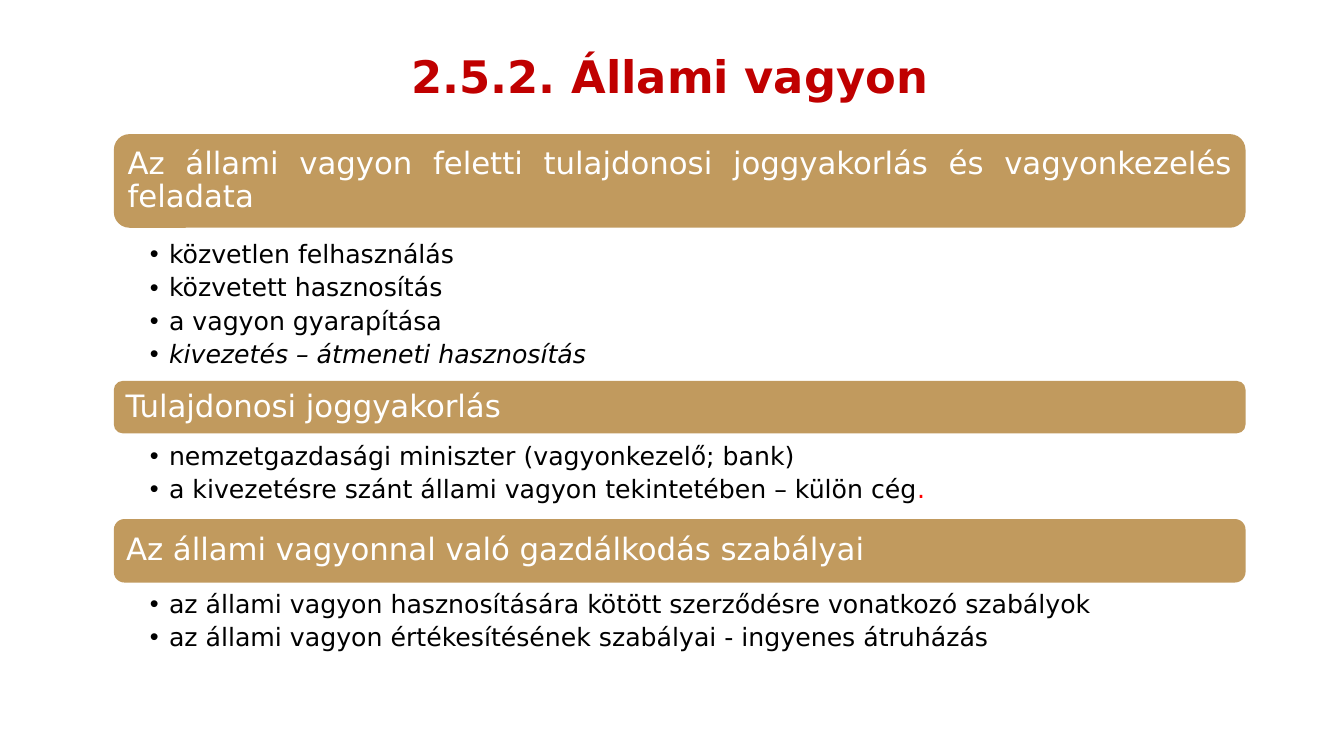
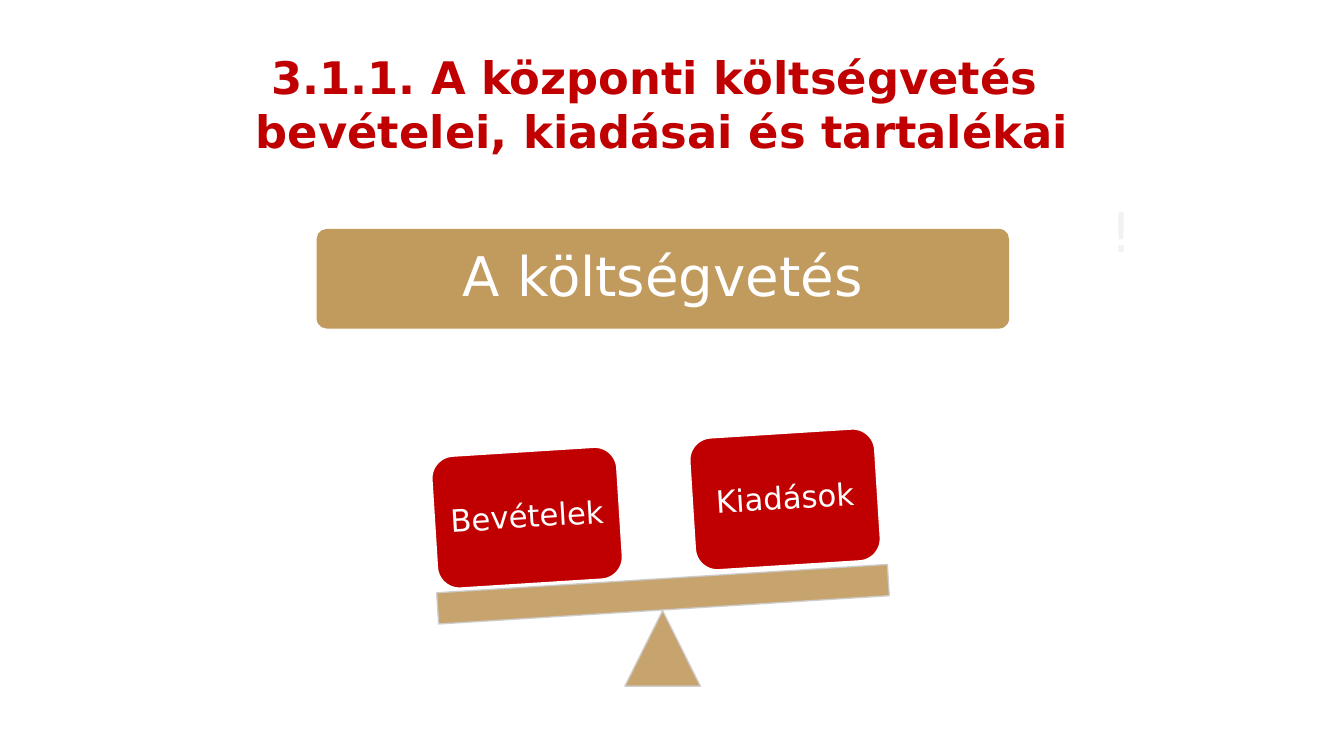
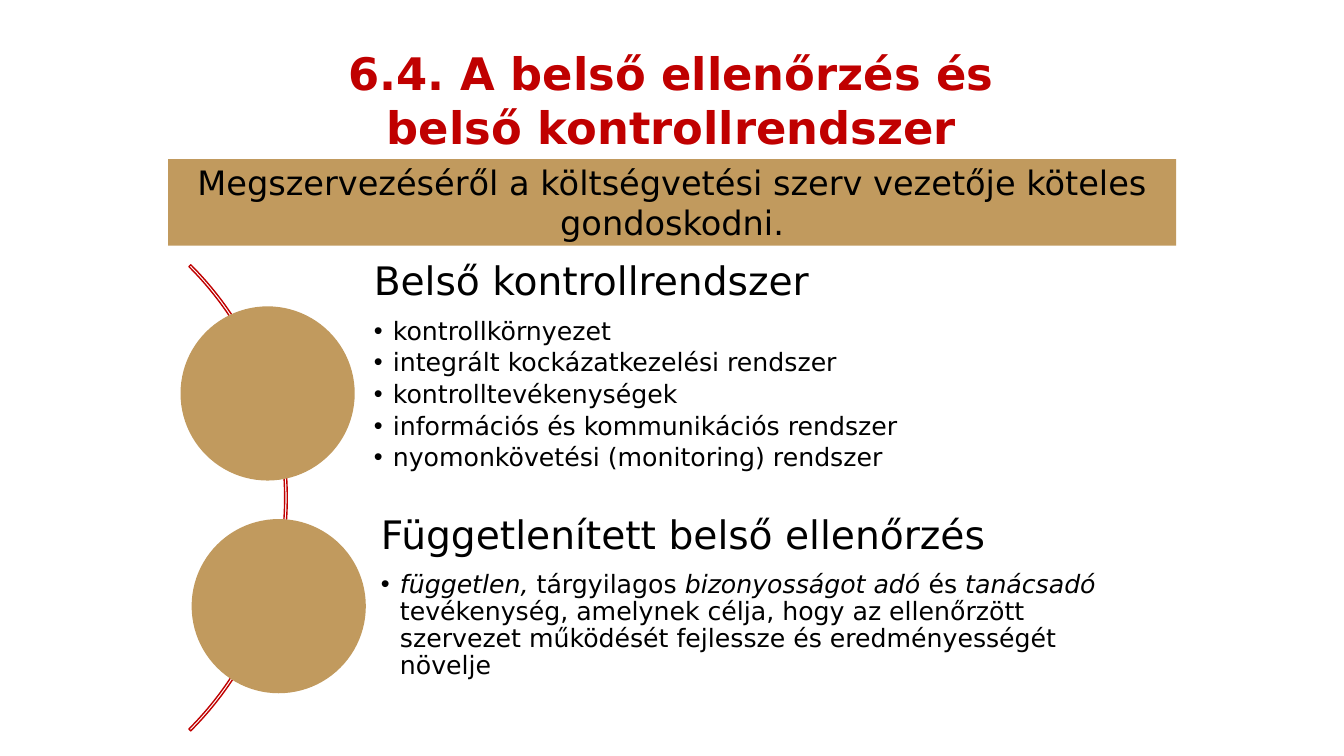
import pptx
import pptx.util
import pptx.dml.color
import pptx.enum.shapes
import pptx.enum.text
import pptx.oxml
import pptx.oxml.ns

Cm, Pt = pptx.util.Cm, pptx.util.Pt
RGBColor = pptx.dml.color.RGBColor
MSO_SHAPE = pptx.enum.shapes.MSO_SHAPE
PP_ALIGN = pptx.enum.text.PP_ALIGN
MSO_ANCHOR = pptx.enum.text.MSO_ANCHOR
MSO_AUTO_SIZE = pptx.enum.text.MSO_AUTO_SIZE

# Colours
RED = RGBColor(0xC0, 0x00, 0x00)
BRIGHT_RED = RGBColor(0xFF, 0x00, 0x00)
GOLD = RGBColor(0xC1, 0x9A, 0x5E)
GREY = RGBColor(0xCC, 0xCC, 0xCC)
PALE = RGBColor(0xF2, 0xF2, 0xF2)
WHITE = RGBColor(0xFF, 0xFF, 0xFF)
BLACK = RGBColor(0x00, 0x00, 0x00)

# Text styles: paragraph values, font values, colour and, for lists, the bullet
FONT = "DejaVu Sans"
CENTER = {"alignment": PP_ALIGN.CENTER, "line_spacing": 0.9}
LEFT = {"alignment": PP_ALIGN.LEFT, "line_spacing": 0.9, "space_before": Pt(0)}
TITLE = {"p": {"alignment": PP_ALIGN.CENTER}, "font": {"size": Pt(32), "bold": True}, "color": RED}
BAR = {"p": LEFT, "font": {"size": Pt(22)}, "color": WHITE}
BOX = {**BAR, "p": CENTER}
BIG = {"p": CENTER, "font": {"size": Pt(39)}, "color": WHITE}
ITEM = {"p": {**LEFT, "level": 1, "space_after": Pt(4.2)},
        "font": {"size": Pt(18), "bold": False}, "color": BLACK, "bullet": "•"}
POINT = {**ITEM, "p": {**ITEM["p"], "space_after": Pt(3.2)}}
HEADING = {"p": {**LEFT, "space_after": Pt(10)}, "font": {"size": Pt(28)}, "color": BLACK, "bullet": ""}

# Text margins in cm: left, top, right, bottom
INSET = (0.25, 0.13, 0.25, 0.13)
EVEN = (0.23,) * 4
WIDE = (0.41,) * 4
LIST = (0.91, 0.08, 0.36, 0.08)
BESIDE = (2.79, 0.2, 0.2, 0.2)


def add_shape(s, kind, box, fill=None, line=None, alpha=None, rot=0):
    sp = s.shapes.add_shape(kind, *map(Cm, box))
    sp.shadow.inherit = False
    sp.rotation = rot
    for part, color in ((sp.fill, fill), (sp.line.fill, line)):
        if color is None:
            part.background()
        else:
            part.solid()
            part.fore_color.rgb = color
    if line is not None:
        sp.line.width = Pt(1)
    if alpha:
        for clr in sp._element.spPr.iter(pptx.oxml.ns.qn("a:srgbClr")):
            clr.append(pptx.oxml.parse_xml(
                f'<a:alpha {pptx.oxml.ns.nsdecls("a")} val="{alpha * 1000}"/>'))
    return sp


def write(sp, paragraphs, box=None, inset=INSET, anchor=MSO_ANCHOR.MIDDLE):
    """Each paragraph is (style, run, run, ...); a run is text or (text, changes)."""
    if box:
        sp.left, sp.top, sp.width, sp.height = map(Cm, box)
    tf = sp.text_frame
    tf.word_wrap, tf.auto_size, tf.vertical_anchor = True, MSO_AUTO_SIZE.NONE, anchor
    for side, value in zip(("left", "top", "right", "bottom"), inset):
        setattr(tf, f"margin_{side}", Cm(value))
    for i, (style, *runs) in enumerate(paragraphs):
        p = tf.add_paragraph() if i else tf.paragraphs[0]
        if "bullet" in style:
            pPr = p._p.get_or_add_pPr()
            indent = Cm(0.48) if style["bullet"] else 0
            pPr.set("marL", str(indent))
            pPr.set("indent", str(-indent))
            tag = f'buChar char="{style["bullet"]}"' if style["bullet"] else "buNone"
            ns = pptx.oxml.ns.nsdecls("a")
            pPr.append(pptx.oxml.parse_xml(f"<a:{tag} {ns}/>"))
        for name, value in style["p"].items():
            setattr(p, name, value)
        for run in runs:
            text, changes = (run, {}) if isinstance(run, str) else run
            for j, piece in enumerate(text.split("\n")):
                if j:
                    p.add_line_break()
                r = p.add_run()
                r.text = piece
                values = {"name": FONT, **style["font"], **changes}
                r.font.color.rgb = values.pop("color", style["color"])
                for name, value in values.items():
                    setattr(r.font, name, value)


prs = pptx.Presentation()
prs.slide_width, prs.slide_height = Cm(33.87), Cm(19.05)
TWO_CONTENT, COMPARISON, TITLE_ONLY = (prs.slide_layouts[i] for i in (3, 4, 5))
ITALIC = {"italic": True}

# Slide 1: state property, three bars with lists
s = prs.slides.add_slide(COMPARISON)
title = {**TITLE, "p": CENTER}
write(s.shapes.title, [(title, "2.5.2. Állami vagyon")], (4.19, 1.17, 25.4, 1.63))

justified = {"alignment": PP_ALIGN.JUSTIFY}
bar_justified = {**BAR, "p": {**LEFT, **justified}}
item_justified = {**ITEM, "p": {**ITEM["p"], **justified}}
sections = [
    # placeholder, bar top and height, bar text, list top and height, items
    (1, 3.38, 2.36,
     (bar_justified, "Az állami vagyon feletti tulajdonosi joggyakorlás és vagyonkezelés feladata"),
     6.02, 3.4,
     [(ITEM, "közvetlen felhasználás"),
      (ITEM, "közvetett hasznosítás"),
      (ITEM, "a vagyon gyarapítása"),
      (ITEM, ("kivezetés – átmeneti hasznosítás", ITALIC))]),
    (2, 9.6, 1.32, (BAR, "Tulajdonosi joggyakorlás"), 11.1, 1.9,
     [(item_justified, "nemzetgazdasági miniszter (vagyonkezelő; bank)"),
      (item_justified, "a kivezetésre szánt állami vagyon tekintetében – külön cég",
       (".", {"color": BRIGHT_RED}))]),
    (4, 13.08, 1.6, (BAR, "Az állami vagyonnal való gazdálkodás szabályai"), 14.83, 2.44,
     [(ITEM, "az állami vagyon hasznosítására kötött szerződésre vonatkozó szabályok"),
      (ITEM, "az állami vagyon értékesítésének szabályai - ingyenes átruházás")]),
]
for idx, bar_top, bar_height, heading, list_top, list_height, items in sections:
    sp = add_shape(s, MSO_SHAPE.ROUNDED_RECTANGLE, (2.87, bar_top, 28.52, bar_height), GOLD)
    write(sp, [heading], inset=EVEN)
    write(s.placeholders[idx], items, (2.87, list_top, 28.52, list_height), LIST, MSO_ANCHOR.TOP)
unused = s.placeholders[3]._element
unused.getparent().remove(unused)

# Slide 2: central budget, a tilted balance
s = prs.slides.add_slide(TITLE_ONLY)
write(s.shapes.title,
      [(TITLE, "3.1.1. A központi költségvetés \nbevételei, kiadásai és tartalékai")],
      (4.39, 1.22, 24.61, 2.79))
sp = add_shape(s, MSO_SHAPE.ROUNDED_RECTANGLE, (7.98, 5.77, 17.45, 2.51), GOLD)
sp.adjustments[0] = 0.1
write(sp, [(BIG, "A költségvetés")], inset=WIDE)
sp = s.shapes.add_textbox(*map(Cm, (26.57, 4.72, 3.38, 2.39)))
write(sp, [({**BIG, "color": PALE}, "!")], inset=WIDE)

TILT = 356.4
add_shape(s, MSO_SHAPE.ISOSCELES_TRIANGLE, (15.75, 15.39, 1.9, 1.9), GOLD, GREY, 90)
add_shape(s, MSO_SHAPE.RECTANGLE, (11.02, 14.58, 11.38, 0.79), GOLD, GREY, 90, TILT)
for text, left, top in (("Bevételek", 10.95, 11.38), ("Kiadások", 17.45, 10.92)):
    sp = add_shape(s, MSO_SHAPE.ROUNDED_RECTANGLE, (left, top, 4.67, 3.33), RED, WHITE, rot=TILT)
    write(sp, [(BOX, text)], inset=EVEN)

# Slide 3: internal audit, two circles on an arc
s = prs.slides.add_slide(TWO_CONTENT)
write(s.shapes.title, [(TITLE, "6.4. A belső ellenőrzés és belső kontrollrendszer")],
      (6.78, 1.02, 20.29, 3), anchor=MSO_ANCHOR.TOP)
sp = add_shape(s, MSO_SHAPE.BLOCK_ARC, (-9.37, 4.24, 16.61, 16.61), line=RED)
for i, value in enumerate((189, 27, 0.004)):
    sp.adjustments[i] = value

controls = ["kontrollkörnyezet", "integrált kockázatkezelési rendszer", "kontrolltevékenységek",
            "információs és kommunikációs rendszer", "nyomonkövetési (monitoring) rendszer"]
audit = [("független,", ITALIC), " tárgyilagos ", ("bizonyosságot adó ", ITALIC), "és ",
         ("tanácsadó ", ITALIC),
         "tevékenység, amelynek célja, hogy az ellenőrzött szervezet működését fejlessze "
         "és eredményességét növelje"]
topics = [
    (1, (4.55, 7.72), (6.63, 6.4, 22.28, 6.4),
     [(HEADING, "Belső kontrollrendszer")] + [(POINT, text) for text in controls]),
    (2, (4.83, 13.08), (6.81, 12.78, 22.28, 5.97),
     [(HEADING, "Függetlenített belső ellenőrzés"), (POINT, *audit)]),
]
for idx, corner, box, paragraphs in topics:
    add_shape(s, MSO_SHAPE.OVAL, (*corner, 4.39, 4.39), GOLD)
    write(s.placeholders[idx], paragraphs, box, BESIDE, MSO_ANCHOR.TOP)

sp = add_shape(s, MSO_SHAPE.RECTANGLE, (4.24, 4.01, 25.4, 2.18), GOLD)
duty = {"p": {"alignment": PP_ALIGN.CENTER}, "font": {"size": Pt(24)}, "color": BLACK}
write(sp, [(duty, "Megszervezéséről a költségvetési szerv vezetője köteles gondoskodni.")])

prs.save("out.pptx")
